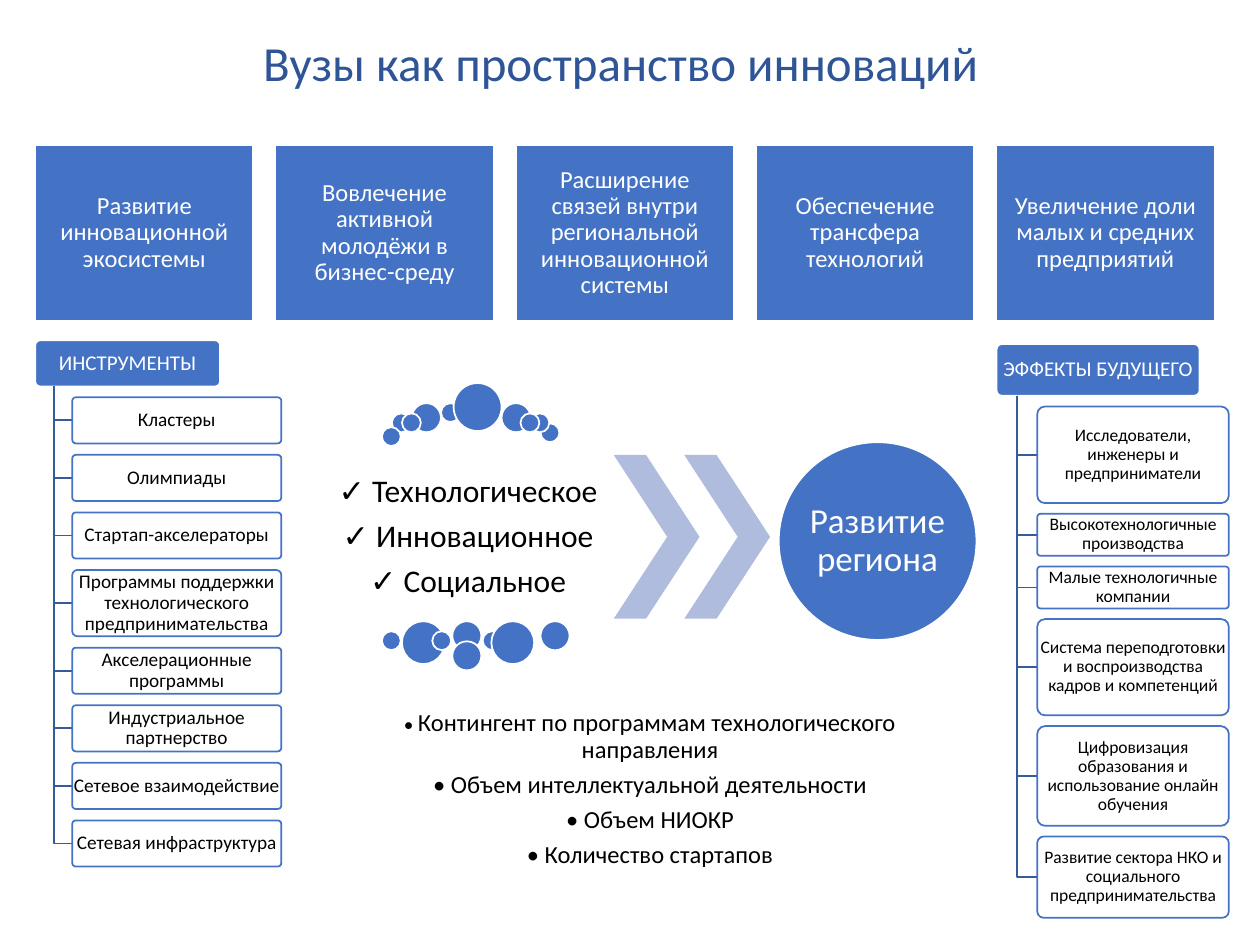
from pptx import Presentation
from pptx.dml.color import RGBColor as RGB
from pptx.enum.shapes import MSO_SHAPE as SHAPE
from pptx.enum.text import MSO_ANCHOR as ANCHOR, PP_ALIGN as ALIGN
from pptx.util import Pt

THEME = {
    "font": "Calibri",
    "blue": RGB(0x44, 0x72, 0xC4), "title": RGB(0x2F, 0x55, 0x97),
    "trunk": RGB(0x36, 0x5B, 0x9D), "pale": RGB(0xB0, 0xBC, 0xDE),
    "white": RGB(255, 255, 255), "black": RGB(0, 0, 0),
    "title_size": 28, "region_size": 20, "kind_size": 18, "body_size": 14,
    "header_size": 12, "tool_size": 11, "effect_size": 10, "dot_size": 11,
}


def add_shape(kind, at, fill, line=None, adj=None):
    sp = s.shapes.add_shape(kind, *[Pt(v) for v in at])
    sp.shadow.inherit = False
    sp.fill.solid()
    sp.fill.fore_color.rgb = THEME[fill]
    if line:
        sp.line.color.rgb = THEME[line]
        sp.line.width = Pt(1)
    else:
        sp.line.fill.background()
    if adj:
        sp.adjustments[0] = adj
    return sp


def write(sp, paragraphs, size, color, inset=(0, 0), anchor=ANCHOR.MIDDLE, spacing=0.9, after=0.35):
    tf = sp.text_frame
    x, y = [Pt(v) for v in inset]
    frame = {"word_wrap": True, "vertical_anchor": anchor, "margin_left": x,
             "margin_right": x, "margin_top": y, "margin_bottom": y}
    for name, value in frame.items():
        setattr(tf, name, value)
    for i, runs in enumerate(paragraphs):
        p = tf.paragraphs[0] if i == 0 else tf.add_paragraph()
        layout = {"alignment": ALIGN.CENTER, "line_spacing": spacing,
                  "space_after": Pt(round(after * THEME[size], 1))}
        for name, value in layout.items():
            setattr(p, name, value)
        for text, run_size in runs:
            r = p.add_run()
            r.text = text
            for name, value in {"name": THEME["font"], "size": Pt(THEME[run_size])}.items():
                setattr(r.font, name, value)
            r.font.color.rgb = THEME[color]


prs = Presentation()
prs.slide_width, prs.slide_height = Pt(720), Pt(540)
s = prs.slides.add_slide(prs.slide_layouts[6])

title = s.shapes.add_textbox(Pt(14.4), Pt(15), Pt(680.4), Pt(41))
write(title, [[("Вузы как пространство инноваций", "title_size")]], "title_size", "title",
      inset=(7.2, 3.6), anchor=ANCHOR.TOP, spacing=1.0, after=0)

goals = [
    "Развитие инновационной экосистемы",
    "Вовлечение активной молодёжи в бизнес-среду",
    "Расширение связей внутри региональной инновационной системы",
    "Обеспечение трансфера технологий",
    "Увеличение доли малых и средних предприятий",
]
for i, goal in enumerate(goals):
    sp = add_shape(SHAPE.RECTANGLE, (20.2 + i * 137.3, 83, 124.6, 100.4), "blue", "white")
    write(sp, [[(goal, "body_size")]], "body_size", "white", inset=(4.3, 4.3))

columns = [
    ("ИНСТРУМЕНТЫ", (20.2, 194.5, 105.5, 26.3), 227, 119.5, 6.5, "tool_size", [
        ("Кластеры", 26.4),
        ("Олимпиады", 26.4),
        ("Стартап-акселераторы", 26.4),
        ("Программы поддержки технологического предпринимательства", 37.9),
        ("Акселерационные программы", 26.4),
        ("Индустриальное партнерство", 26.4),
        ("Сетевое взаимодействие", 26.4),
        ("Сетевая инфраструктура", 26.4),
    ]),
    ("ЭФФЕКТЫ БУДУЩЕГО", (569.5, 196.6, 116, 29.5), 232.3, 109.5, 6.1, "effect_size", [
        ("Исследователи, инженеры и предприниматели", 55.2),
        ("Высокотехнологичные производства", 24),
        ("Малые технологичные компании", 24),
        ("Система переподготовки и воспроизводства кадров и компетенций", 55),
        ("Цифровизация образования и использование онлайн обучения", 57),
        ("Развитие сектора НКО и социального предпринимательства", 46.5),
    ]),
]
for header, at, top, width, gap, size, items in columns:
    sp = add_shape(SHAPE.ROUNDED_RECTANGLE, at, "blue", "white", 0.1)
    write(sp, [[(header, "header_size")]], "header_size", "white", inset=(1, 1))
    left, header_top, header_width, header_height = at
    trunk_x = left + header_width * 0.1
    item_x = left + header_width * 0.2
    header_bottom = header_top + header_height
    for text, height in items:
        middle = top + height / 2
        branch = s.shapes.build_freeform(Pt(trunk_x), Pt(header_bottom))
        branch.add_line_segments([(Pt(trunk_x), Pt(middle)), (Pt(item_x), Pt(middle))], close=False)
        sp = branch.convert_to_shape()
        sp.shadow.inherit = False
        sp.fill.background()
        sp.line.color.rgb = THEME["trunk"]
        sp.line.width = Pt(1)
        sp = add_shape(SHAPE.ROUNDED_RECTANGLE, (item_x, top, width, height), "white", "blue", 0.08)
        write(sp, [[(text, size)]], size, "black")
        top += height + gap

kinds = ["✓ Технологическое", "✓ Инновационное", "✓ Социальное"]
sp = s.shapes.add_textbox(Pt(184.3), Pt(266.4), Pt(166.3), Pt(81.4))
write(sp, [[(kind, "kind_size")] for kind in kinds], "kind_size", "black", inset=(2, 2))

small, medium, large, largest = 10.8, 16.6, 24.5, 27.4
bubbles = [
    (252, 230.4, small), (223.9, 236.2, small), (235.4, 230.4, medium), (218.2, 244.1, small),
    (229.7, 236.2, small), (308.9, 241.9, small), (286.6, 230.4, medium), (303.1, 236.2, small),
    (297.4, 236.2, small), (259.2, 218.9, largest),
    (218.2, 360.7, small), (258.5, 355, medium), (229.7, 355, large), (247, 360.7, small),
    (258.5, 366.5, medium), (275.8, 360.7, small), (280.8, 355, large), (308.9, 355, medium),
]
for x, y, diameter in bubbles:
    add_shape(SHAPE.OVAL, (x, y, diameter, diameter), "blue", "white")

for x in (350.7, 391):
    add_shape(SHAPE.CHEVRON, (x, 260, 49, 93.6), "pale", adj=0.623)

sp = add_shape(SHAPE.OVAL, (445, 252.7, 113, 113), "blue", "white")
write(sp, [[("Развитие региона", "region_size")]], "region_size", "white")

measures = [
    [("• ", "dot_size"), ("Контингент по программам технологического направления", "body_size")],
    [("• Объем интеллектуальной деятельности", "body_size")],
    [("• Объем НИОКР", "body_size")],
    [("• Количество стартапов", "body_size")],
]
sp = s.shapes.add_textbox(Pt(190), Pt(411.8), Pt(363), Pt(79.2))
write(sp, measures, "body_size", "black", inset=(0.7, 0.7))

prs.save("out.pptx")
